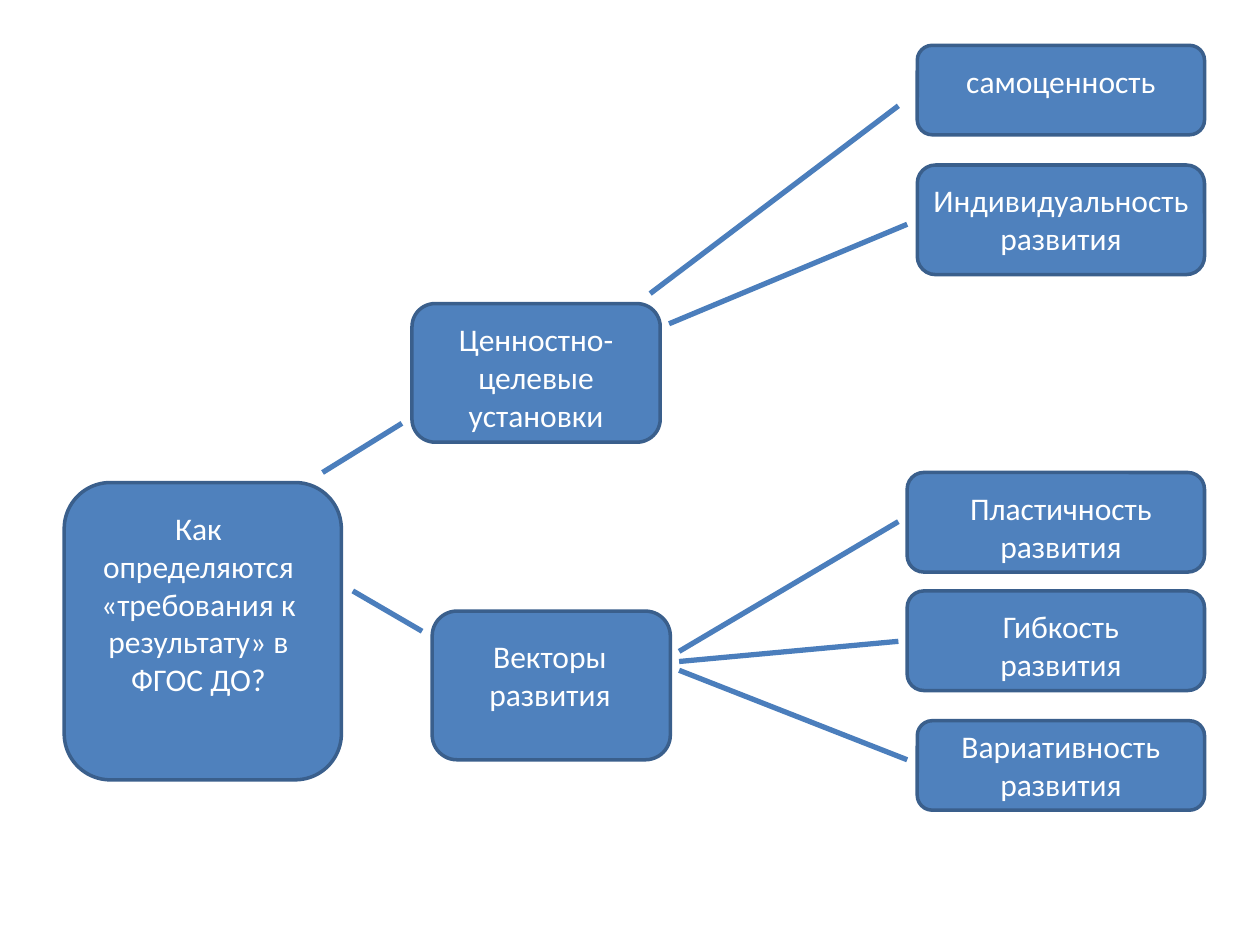
import pptx
import pptx.dml.color
import pptx.enum.shapes
import pptx.enum.text
import pptx.oxml
import pptx.util
from pptx.util import Inches

FILL, OUTLINE, BRANCH, WHITE = "4F81BD", "3A5F8C", "4B7EBC", "FFFFFF"

# Each node: label, block (left, top, width, height), label area (the same)
NODES = [
    ("Как определяются «требования к результату» в ФГОС ДО?",
     (0.51, 3.83, 2.2, 2.36), (0.67, 3.99, 1.81, 1.62)),
    ("Векторы развития", (3.43, 4.85, 1.89, 1.18), (3.58, 5.01, 1.57, 0.71)),
    ("Ценностно-целевые установки",
     (3.27, 2.41, 1.97, 1.1), (3.43, 2.49, 1.65, 1.01)),
    ("самоценность", (7.28, 0.36, 2.28, 0.71), (7.36, 0.44, 2.12, 0.4)),
    ("Индивидуальность развития",
     (7.28, 1.31, 2.28, 0.87), (7.28, 1.39, 2.28, 0.71)),
    ("Пластичность развития",
     (7.2, 3.75, 2.36, 0.79), (7.36, 3.83, 2.12, 0.71)),
    ("Гибкость развития", (7.2, 4.69, 2.36, 0.79), (7.36, 4.77, 2.12, 0.71)),
    ("Вариативность развития",
     (7.28, 5.72, 2.28, 0.71), (7.36, 5.72, 2.12, 0.71)),
]

# Each branch: start x, start y, end x, end y
BRANCHES = [
    (2.56, 3.75, 3.19, 3.36),
    (2.8, 4.69, 3.35, 5.01),
    (5.16, 2.33, 7.13, 0.84),
    (5.31, 2.57, 7.2, 1.78),
    (5.39, 5.32, 7.2, 6.03),
    (5.39, 5.25, 7.13, 5.09),
    (5.39, 5.17, 7.13, 4.14),
]


def color(hex_string):
    return pptx.dml.color.RGBColor.from_string(hex_string)


def set_line(shape, hex_string, width):
    shape.line.color.rgb = color(hex_string)
    shape.line.width = pptx.util.Pt(width)


def add_block(slide, area):
    block = slide.shapes.add_shape(
        pptx.enum.shapes.MSO_SHAPE.ROUNDED_RECTANGLE, *map(Inches, area))
    block.shadow.inherit = False
    block.fill.solid()
    block.fill.fore_color.rgb = color(FILL)
    set_line(block, OUTLINE, 2)


def add_text(slide, text, area, size=18, font="Calibri", hex_string=WHITE,
             align=pptx.enum.text.PP_ALIGN.CENTER):
    box = slide.shapes.add_textbox(*map(Inches, area))
    frame = box.text_frame
    frame.word_wrap = True
    frame.auto_size = pptx.enum.text.MSO_AUTO_SIZE.SHAPE_TO_FIT_TEXT
    para = frame.paragraphs[0]
    para.alignment = align
    span = para.add_run()
    span.text = text
    span.font.size = pptx.util.Pt(size)
    span.font.name = font
    span.font.color.rgb = color(hex_string)


def add_branch(slide, ends):
    branch = slide.shapes.add_connector(
        pptx.enum.shapes.MSO_CONNECTOR.STRAIGHT, *map(Inches, ends))
    set_line(branch, BRANCH, 3)
    properties = branch._element.spPr
    properties.append(pptx.oxml.parse_xml(
        '<a:effectLst xmlns:a='
        '"http://schemas.openxmlformats.org/drawingml/2006/main"/>'))


def main():
    deck = pptx.Presentation()
    deck.slide_width, deck.slide_height = Inches(10), Inches(7.5)
    slide = deck.slides.add_slide(deck.slide_layouts.get_by_name("Blank"))
    for _, block_area, _ in NODES:
        add_block(slide, block_area)
    for label, _, label_area in NODES:
        add_text(slide, label, label_area)
    for ends in BRANCHES:
        add_branch(slide, ends)
    deck.save("out.pptx")


if __name__ == "__main__":
    main()
